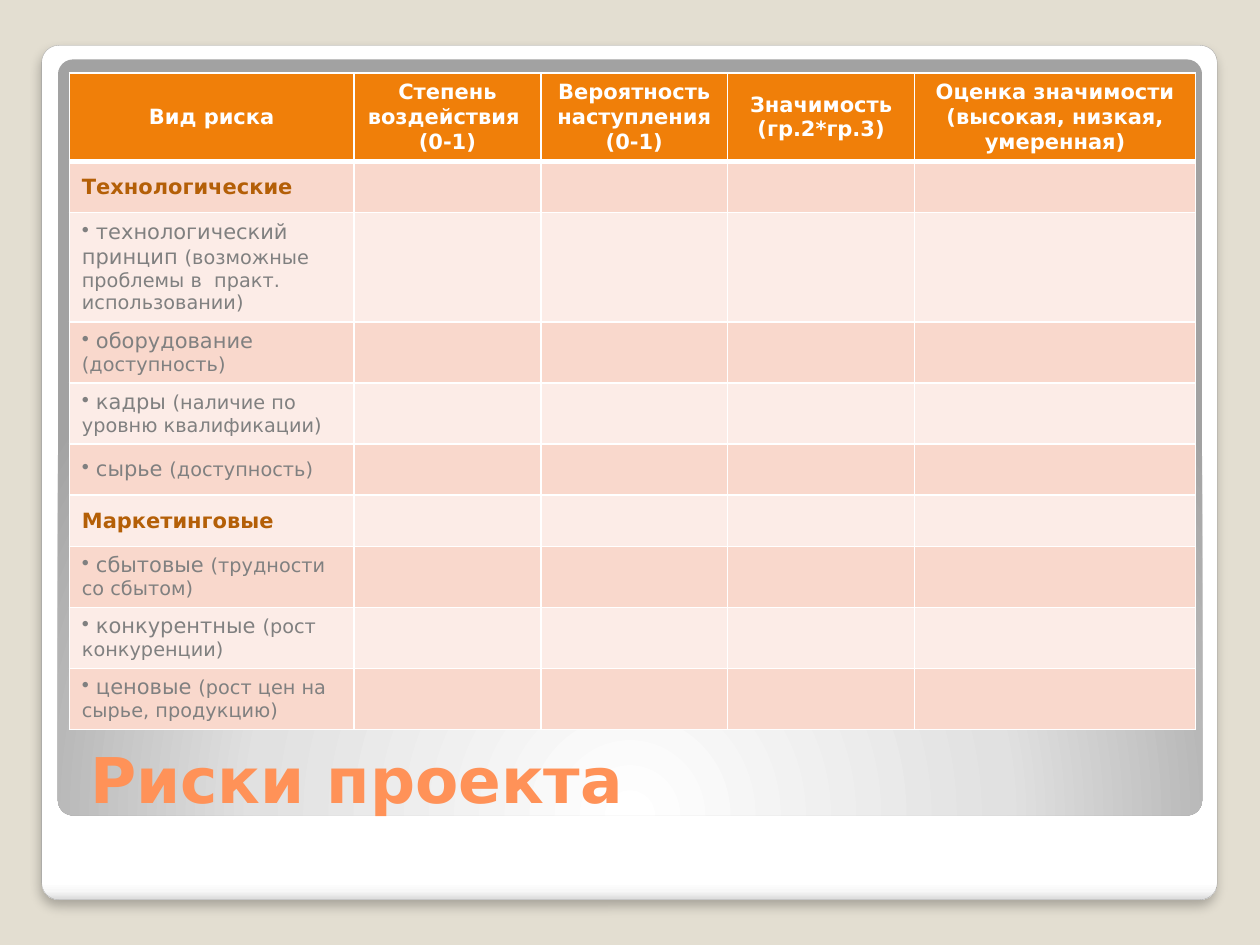
from lxml import etree
from pptx import Presentation
from pptx.dml.color import RGBColor
from pptx.enum import shapes, text
from pptx.oxml import ns, parse_xml
from pptx.util import Pt

FONT = "DejaVu Sans"
BACKDROP = RGBColor(0xE3, 0xDE, 0xD1)
WHITE = RGBColor(0xFF, 0xFF, 0xFF)
EDGE = RGBColor(0xA4, 0xA4, 0xA4)
TITLE = RGBColor(0xFF, 0x92, 0x58)
ORANGE = RGBColor(0xF0, 0x7F, 0x09)
GROUP = RGBColor(0xB4, 0x5F, 0x07)
GREY = RGBColor(0x80, 0x80, 0x80)
BANDS = (RGBColor(0xF9, 0xD8, 0xCC), RGBColor(0xFC, 0xEC, 0xE7))

FRAME_STOPS = [(0, WHITE), (98, WHITE), (99, RGBColor(0xF7, 0xF7, 0xF7)),
               (100, RGBColor(0xDA, 0xDA, 0xDA))]
PANEL_STOPS = [(0, WHITE), (55, RGBColor(0xE1, 0xE1, 0xE1)),
               (100, RGBColor(0xA2, 0xA2, 0xA2))]
DOWNWARD = '<a:lin ang="5400000" scaled="0"/>'
FROM_BELOW = ('<a:path path="circle"><a:fillToRect l="50000" t="175000" '
              'r="50000" b="-75000"/></a:path>')
SOFT_SHADOW = ('<a:outerShdw blurRad="76200" dist="50800" dir="5400000" algn="tl" '
               'rotWithShape="0"><a:srgbClr val="000000"><a:alpha val="25000"/>'
               '</a:srgbClr></a:outerShdw>')

COLUMN_WIDTHS = (162.7, 106.8, 106.8, 106.8, 160.6)
ROW_HEIGHT = 29.3
HEADINGS = [
    ["Вид риска"],
    ["Степень воздействия ", "(0-1)"],
    ["Вероятность наступления (0-1)"],
    ["Значимость (гр.2*гр.3)"],
    ["Оценка значимости (высокая, низкая, умеренная)"],
]
RISKS = [
    ("Технологические", None),
    (" технологический принцип ", "(возможные проблемы в  практ. использовании)"),
    (" оборудование ", "(доступность)"),
    (" кадры ", "(наличие по уровню квалификации)"),
    (" сырье ", "(доступность)"),
    ("Маркетинговые", None),
    (" сбытовые ", "(трудности со сбытом)"),
    (" конкурентные ", "(рост конкуренции)"),
    (" ценовые ", "(рост цен на сырье, продукцию)"),
]


def drawing_xml(tag, content):
    """Return a DrawingML element with the given inner markup."""
    return parse_xml(f'<a:{tag} {ns.nsdecls("a")}>{content}</a:{tag}>')


def add_run(paragraph, words, size, color, bold=False):
    """Append one formatted run."""
    run = paragraph.add_run()
    run.text = words
    run.font.name = FONT
    run.font.size = Pt(size)
    run.font.bold = bold
    run.font.color.rgb = color


def add_card(slide, left, top, width, height, stops, direction):
    """Draw a slightly rounded card filled with a gradient."""
    card = slide.shapes.add_shape(shapes.MSO_SHAPE.ROUNDED_RECTANGLE,
                                  Pt(left), Pt(top), Pt(width), Pt(height))
    card.adjustments[0] = 0.02
    card.shadow.inherit = False
    card.line.fill.background()
    colors = "".join(f'<a:gs pos="{position * 1000}"><a:srgbClr val="{color}"/></a:gs>'
                     for position, color in stops)
    gradient = drawing_xml("gradFill", f"<a:gsLst>{colors}</a:gsLst>{direction}")
    card._element.spPr.find(ns.qn("a:prstGeom")).addnext(gradient)
    return card


def add_outer_frame(slide):
    """Draw the white frame with its thin edge and soft shadow."""
    frame = add_card(slide, 23.8, 25.9, 671.8, 488.2, FRAME_STOPS, DOWNWARD)
    frame.line.color.rgb = EDGE
    frame.line.width = Pt(0.16)
    effects = frame._element.spPr.find(ns.qn("a:effectLst"))
    effects.append(drawing_xml("effectLst", SOFT_SHADOW)[0])


def add_title(slide):
    """Write the slide title at the foot of the panel."""
    box = slide.shapes.add_textbox(Pt(44.6), Pt(416.2), Pt(644.4), Pt(50.4))
    frame = box.text_frame
    frame.word_wrap = True
    frame.vertical_anchor = text.MSO_ANCHOR.BOTTOM
    frame.margin_bottom = 0
    add_run(frame.paragraphs[0], "Риски проекта", 36, TITLE, True)


def style_cell(cell, color, top=1, bottom=1):
    """Fill a cell and give it white borders."""
    cell.fill.solid()
    cell.fill.fore_color.rgb = color
    cell.vertical_anchor = text.MSO_ANCHOR.MIDDLE
    properties = cell._tc.get_or_add_tcPr()
    for place, (side, width) in enumerate(
            (("lnL", 1), ("lnR", 1), ("lnT", top), ("lnB", bottom))):
        border = drawing_xml(
            side, f'<a:solidFill><a:srgbClr val="{WHITE}"/></a:solidFill>')
        border.set("w", str(Pt(width)))
        properties.insert(place, border)


def fill_heading(cell, lines):
    """Write a centred column heading."""
    style_cell(cell, ORANGE, bottom=3)
    frame = cell.text_frame
    for number, line in enumerate(lines):
        paragraph = frame.add_paragraph() if number else frame.paragraphs[0]
        paragraph.alignment = text.PP_ALIGN.CENTER
        add_run(paragraph, line, 12, WHITE, True)


def fill_risk(cell, risk, detail):
    """Write a risk group, or a bulleted risk with its detail."""
    paragraph = cell.text_frame.paragraphs[0]
    if detail is None:
        add_run(paragraph, risk, 12, GROUP, True)
        return
    bullet = etree.SubElement(paragraph._p.get_or_add_pPr(), ns.qn("a:buChar"))
    bullet.set("char", "•")
    add_run(paragraph, risk, 12, GREY)
    add_run(paragraph, detail, 11, GREY)


def add_risk_table(slide):
    """Build the risk assessment table."""
    holder = slide.shapes.add_table(len(RISKS) + 1, len(HEADINGS), Pt(39.6),
                                    Pt(41.8), Pt(644.4), Pt(374.4))
    table = holder.table
    for column, width in zip(table.columns, COLUMN_WIDTHS):
        column.width = Pt(width)
    for row in table.rows:
        row.height = Pt(ROW_HEIGHT)
    for column, lines in enumerate(HEADINGS):
        fill_heading(table.cell(0, column), lines)
    for row, (risk, detail) in enumerate(RISKS, start=1):
        for column in range(len(HEADINGS)):
            style_cell(table.cell(row, column), BANDS[(row - 1) % 2],
                       top=3 if row == 1 else 1)
        fill_risk(table.cell(row, 0), risk, detail)


def main():
    """Assemble and save the slide."""
    deck = Presentation()
    deck.slide_width, deck.slide_height = Pt(720), Pt(540)
    slide = deck.slides.add_slide(deck.slide_layouts[6])
    slide.background.fill.solid()
    slide.background.fill.fore_color.rgb = BACKDROP
    add_outer_frame(slide)
    add_card(slide, 33.1, 34, 653.8, 432, PANEL_STOPS, FROM_BELOW)
    add_title(slide)
    add_risk_table(slide)
    deck.save("out.pptx")


if __name__ == "__main__":
    main()
